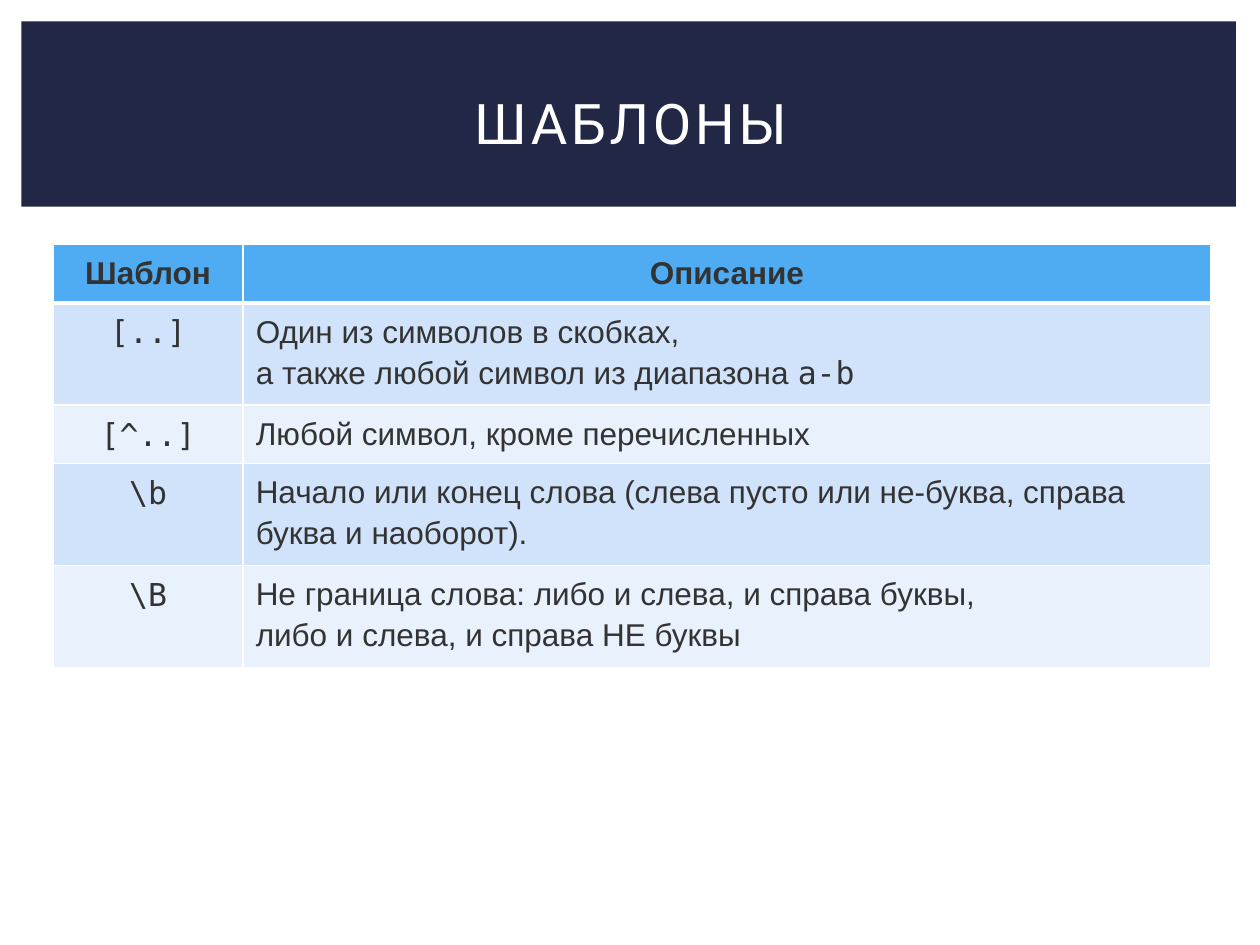
from lxml import etree
from pptx import Presentation
from pptx.dml.color import RGBColor
from pptx.enum.shapes import MSO_SHAPE
from pptx.enum.text import MSO_ANCHOR, PP_ALIGN
from pptx.oxml.ns import qn
from pptx.util import Inches, Pt

RECTANGLE = MSO_SHAPE.RECTANGLE
MIDDLE = MSO_ANCHOR.MIDDLE
CENTER = PP_ALIGN.CENTER
LEFT = PP_ALIGN.LEFT

BODY_FONT = "Arial"
CODE_FONT = "DejaVu Sans Mono"
HEADER_FILL = "4FACF3"
BAND_FILLS = ["D0E3FA", "E9F1FD"]
COLUMN_SHARES = [1.51, 7.68]
ROW_HEIGHTS = [0.43, 0.78, 0.45, 0.76, 0.76]
HEADINGS = ["Шаблон", "Описание"]
PATTERNS = [
    ("[..]", "Один из символов в скобках,\vа также любой символ из диапазона\u00a0", "a-b"),
    ("[^..]", "Любой символ, кроме перечисленных", ""),
    ("\\b", "Начало или конец слова (слева пусто или не-буква, справа буква и наоборот).", ""),
    ("\\B", "Не граница слова: либо и слева, и справа буквы,\vлибо и слева, и справа НЕ буквы", ""),
]


def color(value):
    return RGBColor.from_string(value)


def format_run(run, font, size, value, bold=False):
    run.font.name = font
    run.font.size = Pt(size)
    run.font.color.rgb = color(value)
    run.font.bold = bold


def add_title(slide, left, top, width, height):
    band = slide.shapes.add_shape(
        RECTANGLE, Inches(left), Inches(top), Inches(width), Inches(height))
    band.shadow.inherit = False
    band.fill.solid()
    band.fill.fore_color.rgb = color("212745")
    band.line.fill.background()

    title = slide.shapes.add_textbox(
        Inches(left + 0.25), Inches(top + 0.22), Inches(width - 0.47), Inches(height - 0.32))
    frame = title.text_frame
    frame.word_wrap = True
    frame.vertical_anchor = MIDDLE
    frame.text = "ШАБЛОНЫ"
    paragraph = frame.paragraphs[0]
    paragraph.alignment = CENTER
    run = paragraph.runs[0]
    format_run(run, "Roboto", 32, "FFFFFF")
    run.font._element.set("spc", "200")


def set_borders(cell, top_width, bottom_width):
    properties = cell._tc.get_or_add_tcPr()
    widths = {"a:lnL": 1, "a:lnR": 1, "a:lnT": top_width, "a:lnB": bottom_width}
    for position, (tag, width) in enumerate(widths.items()):
        line = etree.Element(qn(tag), w=str(Pt(width)))
        fill = etree.SubElement(line, qn("a:solidFill"))
        etree.SubElement(fill, qn("a:srgbClr"), val="FFFFFF")
        properties.insert(position, line)


def fill_cell(cell, text, font, alignment, fill, bold=False, code=""):
    cell.margin_left = cell.margin_right = Inches(0.1)
    cell.margin_top = Inches(0.05)
    cell.margin_bottom = Inches(0.07)
    cell.fill.solid()
    cell.fill.fore_color.rgb = color(fill)
    paragraph = cell.text_frame.paragraphs[0]
    paragraph.text = text
    paragraph.alignment = alignment
    paragraph.line_spacing = 1.15
    paragraph.space_before = paragraph.space_after = Pt(18)
    for run in paragraph.runs:
        format_run(run, font, 18, "333333", bold)
    if code:
        run = paragraph.add_run()
        run.text = code
        format_run(run, CODE_FONT, 18, "333333")


def add_pattern_table(slide, left, top, width):
    table = slide.shapes.add_table(
        len(PATTERNS) + 1, len(HEADINGS), Inches(left), Inches(top),
        Inches(width), Inches(sum(ROW_HEIGHTS))).table
    for column, share in zip(table.columns, COLUMN_SHARES):
        column.width = Inches(width * share / sum(COLUMN_SHARES))
    for row, height in zip(table.rows, ROW_HEIGHTS):
        row.height = Inches(height)

    for index, heading in enumerate(HEADINGS):
        fill_cell(table.cell(0, index), heading, BODY_FONT, CENTER, HEADER_FILL, bold=True)
    for index, (pattern, description, code) in enumerate(PATTERNS):
        fill = BAND_FILLS[index % 2]
        fill_cell(table.cell(index + 1, 0), pattern, CODE_FONT, CENTER, fill)
        fill_cell(table.cell(index + 1, 1), description, BODY_FONT, LEFT, fill, code=code)

    for index, row in enumerate(table.rows):
        for cell in row.cells:
            set_borders(cell, 3 if index == 1 else 1, 3 if index == 0 else 1)


def main():
    presentation = Presentation()
    presentation.slide_width = Inches(10)
    presentation.slide_height = Inches(7.5)
    slide = presentation.slides.add_slide(presentation.slide_layouts[6])
    add_title(slide, 0.17, 0.17, 9.64, 1.47)
    add_pattern_table(slide, 0.42, 1.94, 9.19)
    presentation.save("out.pptx")


if __name__ == "__main__":
    main()
